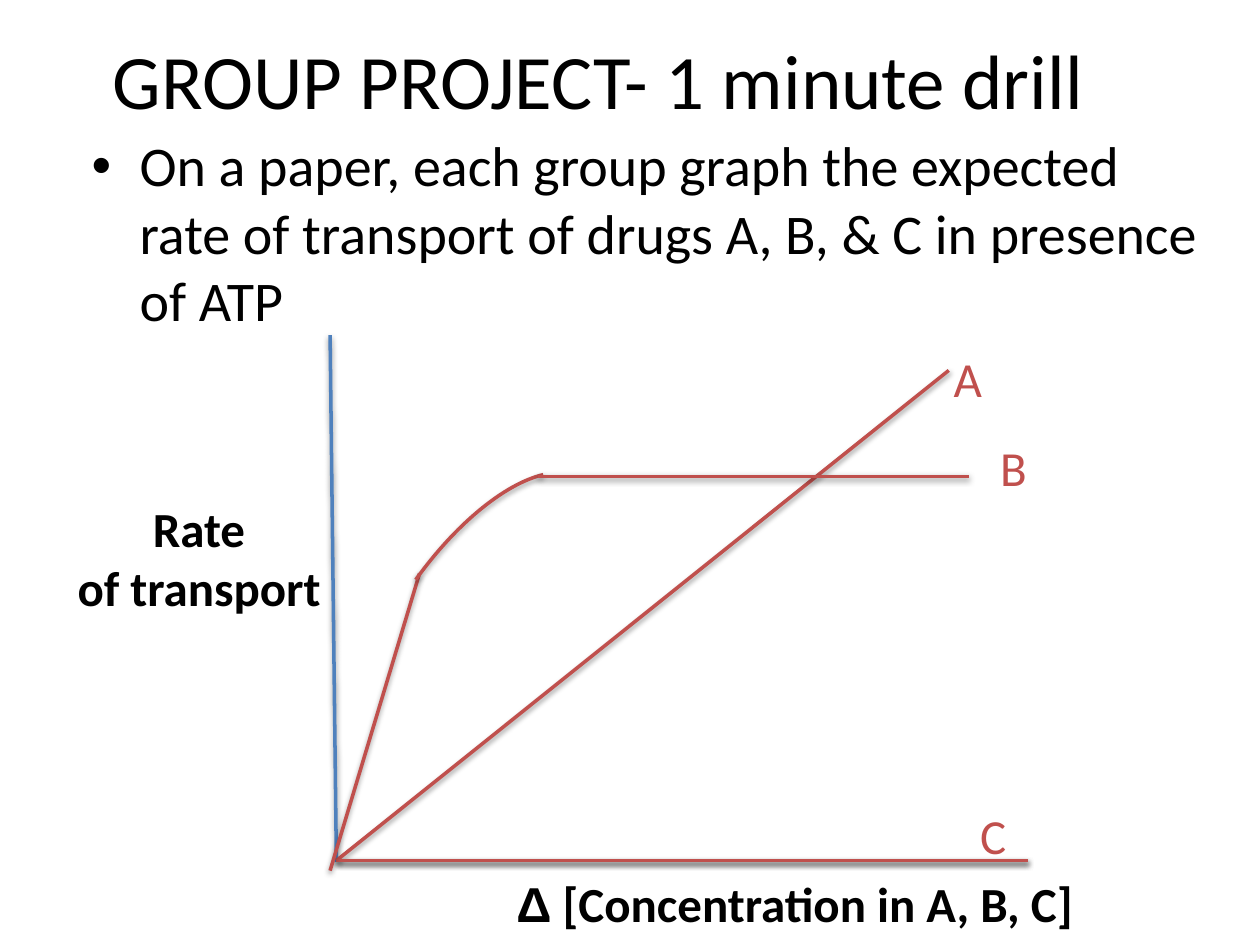
from lxml.etree import SubElement
from pptx import Presentation
from pptx.dml.color import RGBColor
from pptx.enum.shapes import MSO_CONNECTOR, MSO_SHAPE
from pptx.enum.text import MSO_ANCHOR, MSO_AUTO_SIZE, PP_ALIGN
from pptx.oxml.ns import qn
from pptx.util import Inches, Pt

COLORS = {"text": "000000", "axis": "4F81BD", "curve": "C0504D"}
ZERO = (2.67, 6.83)
END = (8.16, 6.83)


def rgb(name):
    return RGBColor.from_string(COLORS[name])


def add_run(para, text, size, color="text", bold=False, font="Calibri"):
    run = para.add_run()
    run.text = text
    run.font.name = font
    run.font.size = Pt(size)
    run.font.bold = bold
    run.font.color.rgb = rgb(color)


def add_box(slide, box, wrap=True, grow=True):
    frame = slide.shapes.add_textbox(*map(Inches, box)).text_frame
    frame.word_wrap = wrap
    frame.auto_size = MSO_AUTO_SIZE.SHAPE_TO_FIT_TEXT if grow else MSO_AUTO_SIZE.NONE
    return frame


def add_shade(shape):
    effect = SubElement(shape._element.spPr, qn("a:effectLst"))
    shade = SubElement(effect, qn("a:outerShdw"), blurRad="40000",
                       dist="20000", dir="5400000", rotWithShape="0")
    color = SubElement(shade, qn("a:srgbClr"), val="000000")
    SubElement(color, qn("a:alpha"), val="38000")


def set_line(shape, color):
    shape.line.color.rgb = rgb(color)
    shape.line.width = Pt(2)
    add_shade(shape)


def add_line(slide, start, end, color="curve"):
    line = slide.shapes.add_connector(
        MSO_CONNECTOR.STRAIGHT, *map(Inches, start + end))
    set_line(line, color)


def add_arc(slide, box, turn, angles):
    arc = slide.shapes.add_shape(MSO_SHAPE.ARC, *map(Inches, box))
    arc.rotation = turn
    for i, angle in enumerate(angles):
        arc.adjustments[i] = angle * 0.6  # 60000 units per degree / 100000
    arc.fill.background()
    set_line(arc, "curve")


def add_label(slide, text, left, top):
    para = add_box(slide, (left, top, 0.93, 0.57)).paragraphs[0]
    add_run(para, text, 28, "curve")


def add_title(slide):
    frame = add_box(slide, (0, 0, 9.5, 1.25), grow=False)
    frame.vertical_anchor = MSO_ANCHOR.MIDDLE
    para = frame.paragraphs[0]
    para.alignment = PP_ALIGN.CENTER
    add_run(para, "GROUP PROJECT- 1 minute drill", 44)


def add_task(slide):
    para = add_box(slide, (0.63, 0.99, 9, 1.69), grow=False).paragraphs[0]
    para.space_before = Pt(6.4)
    props = para._p.get_or_add_pPr()
    props.set("marL", str(Inches(0.38)))
    props.set("indent", str(-Inches(0.38)))
    SubElement(props, qn("a:buFont"), typeface="Arial")
    SubElement(props, qn("a:buChar"), char="•")
    add_run(para, "On a paper, each group graph the expected rate of transport "
                  "of drugs A, B, & C in presence of ATP", 32)


def add_names(slide):
    frame = add_box(slide, (0.5, 3.91, 2.16, 1.04), wrap=False)
    for i, text in enumerate(("Rate", "of transport")):
        para = frame.add_paragraph() if i else frame.paragraphs[0]
        para.alignment = PP_ALIGN.CENTER
        add_run(para, text, 28, bold=True)
    para = add_box(slide, (4, 6.88, 4.64, 0.57), wrap=False).paragraphs[0]
    add_run(para, "Δ", 28, bold=True, font="Arial")
    add_run(para, " [Concentration in A, B, C]", 28, bold=True)


def main():
    deck = Presentation()
    deck.slide_width, deck.slide_height = Inches(10), Inches(7.5)
    slide = deck.slides.add_slide(deck.slide_layouts[6])

    add_title(slide)
    add_task(slide)

    # Axes and their names
    add_line(slide, END, ZERO, "axis")
    add_names(slide)
    add_line(slide, (2.62, 2.66), (2.67, 6.84), "axis")

    # Drug A rises steadily, drug C stays flat
    add_line(slide, ZERO, (7.53, 2.94))
    add_line(slide, ZERO, END)
    add_label(slide, "A", 7.47, 2.72)
    add_label(slide, "C", 7.68, 6.34)

    # Drug B rises, bends and levels off
    add_line(slide, (2.62, 6.91), (3.33, 4.55))
    add_arc(slide, (2.17, 4.45, 3.21, 1.41), 302.5, (286.9, 348.63))
    add_line(slide, (4.27, 3.78), (7.69, 3.78))
    add_label(slide, "B", 7.84, 3.42)

    deck.save("out.pptx")


if __name__ == "__main__":
    main()
